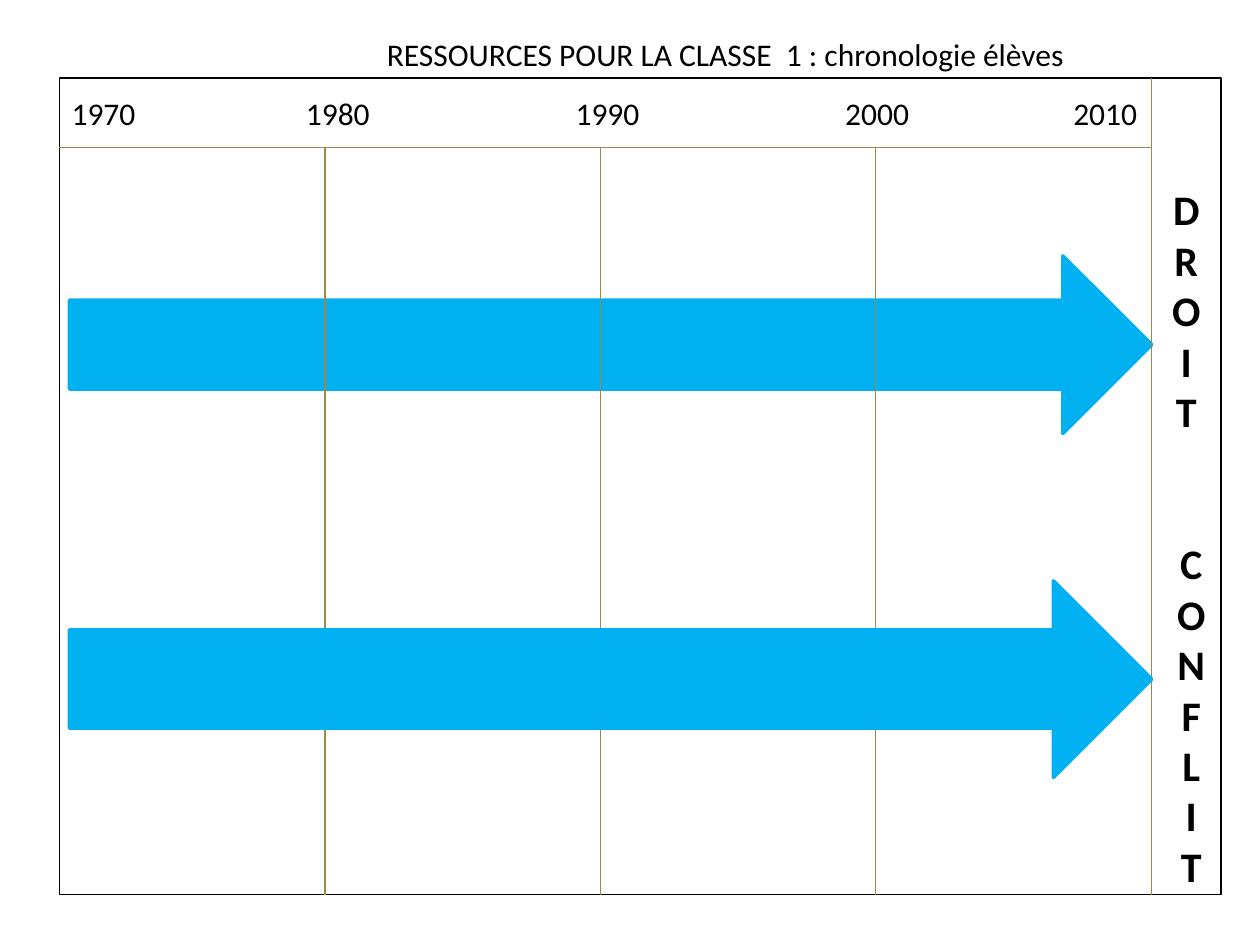
from collections import namedtuple

from lxml.etree import SubElement
from pptx import Presentation
from pptx.dml.color import RGBColor
from pptx.enum.shapes import MSO_CONNECTOR, MSO_SHAPE
from pptx.enum.text import MSO_ANCHOR, MSO_AUTO_SIZE, PP_ALIGN
from pptx.oxml.ns import qn
from pptx.util import Inches, Pt

WIDTH, HEIGHT = Inches(10), Inches(7.5)
BLACK, BLUE, OLIVE = "000000", "00B0F0", "9A8A4A"
NORMAL = {"name": "Calibri", "size": Pt(18), "bold": False}
LETTER = {"name": "Calibri", "size": Pt(24), "bold": True}

# Every box is given in percent of the slide's width and height.
Box = namedtuple("Box", "left top width height")
TITLE = Box(29.7, 3.07, 56.3, 5.33)
FRAME = Box(4.7, 8.27, 92.2, 86.4)
YEARS = Box(4.7, 9.33, 91.4, 5.33)
ARROWS = [Box(5.5, 27.07, 85.9, 18.8), Box(5.5, 61.47, 85.9, 20.8)]
LABELS = {"DROIT": Box(91.4, 18.8, 5.5, 28.27),
          "CONFLIT": Box(92.2, 56.27, 4.7, 39.07)}

HEADER_HEIGHT, SIDE_WIDTH = 7.33, 5.5
FIRST_DECADE, DECADE_WIDTH = 21.1, 21.85
YEAR_TABS = [18.6, 40, 61.4, 79.5]


def across(percent):
    return int(WIDTH * percent / 100)


def down(percent):
    return int(HEIGHT * percent / 100)


def place(box):
    return across(box.left), down(box.top), across(box.width), down(box.height)


def rgb(color):
    return RGBColor.from_string(color)


def set_line(line, color, width):
    line.color.rgb = rgb(color)
    line.width = Pt(width)


def write(shape, lines, font, align=PP_ALIGN.LEFT, wrap=True):
    """Put one paragraph per line into the shape, all in one font format."""
    frame = shape.text_frame
    frame.text = "\n".join(lines)
    settings = {"word_wrap": wrap, "vertical_anchor": MSO_ANCHOR.TOP,
                "auto_size": MSO_AUTO_SIZE.SHAPE_TO_FIT_TEXT}
    for name, value in settings.items():
        setattr(frame, name, value)
    for paragraph in frame.paragraphs:
        paragraph.alignment = align
        for run in paragraph.runs:
            for name, value in font.items():
                setattr(run.font, name, value)
            run.font.color.rgb = rgb(BLACK)


def add_preset(slide, preset, box, line_color, line_width, fill=None):
    shape = slide.shapes.add_shape(preset, *place(box))
    shape.shadow.inherit = False
    if fill:
        shape.fill.solid()
        shape.fill.fore_color.rgb = rgb(fill)
    else:
        shape.fill.background()
    set_line(shape.line, line_color, line_width)


def add_arrow(slide, box):
    add_preset(slide, MSO_SHAPE.RIGHT_ARROW, box, BLUE, 2, BLUE)


def add_rule(slide, left, top, right, bottom):
    rule = slide.shapes.add_connector(
        MSO_CONNECTOR.STRAIGHT, across(left), down(top), across(right), down(bottom))
    set_line(rule.line, OLIVE, 0.75)
    SubElement(rule._element.spPr, qn("a:effectLst"))


def add_title(slide, box, text):
    title = slide.shapes.title
    title.left, title.top, title.width, title.height = place(box)
    write(title, [text], NORMAL, wrap=False)


def add_grid(slide, box):
    """Draw the frame, the decade rules, the side column and the header rule."""
    add_preset(slide, MSO_SHAPE.RECTANGLE, box, BLACK, 0.75)
    header = box.top + HEADER_HEIGHT
    bottom = box.top + box.height
    side = box.left + box.width - SIDE_WIDTH
    for decade in range(3):
        x = box.left + FIRST_DECADE + decade * DECADE_WIDTH
        add_rule(slide, x, header, x, bottom)
    add_rule(slide, side, box.top, side, bottom)
    add_rule(slide, box.left, header, side, header)


def add_years(slide, box):
    """Write the years on one line, spaced by tab stops."""
    shape = slide.shapes.add_textbox(*place(box))
    years = [str(year) for year in range(1970, 2011, 10)]
    write(shape, ["\t".join(years)], NORMAL)
    properties = shape.text_frame.paragraphs[0]._p.get_or_add_pPr()
    tabs = SubElement(properties, qn("a:tabLst"))
    for position in YEAR_TABS:
        SubElement(tabs, qn("a:tab"), pos=str(across(position)), algn="l")


def add_vertical_label(slide, box, word):
    write(slide.shapes.add_textbox(*place(box)), word, LETTER, PP_ALIGN.CENTER)


def main():
    presentation = Presentation()
    presentation.slide_width, presentation.slide_height = WIDTH, HEIGHT
    slide = presentation.slides.add_slide(presentation.slide_layouts[5])
    upper_arrow, lower_arrow = ARROWS
    add_arrow(slide, upper_arrow)
    add_grid(slide, FRAME)
    add_years(slide, YEARS)
    add_title(slide, TITLE, "RESSOURCES POUR LA CLASSE  1 : chronologie élèves")
    add_arrow(slide, lower_arrow)
    for word, box in LABELS.items():
        add_vertical_label(slide, box, word)
    presentation.save("out.pptx")


if __name__ == "__main__":
    main()
